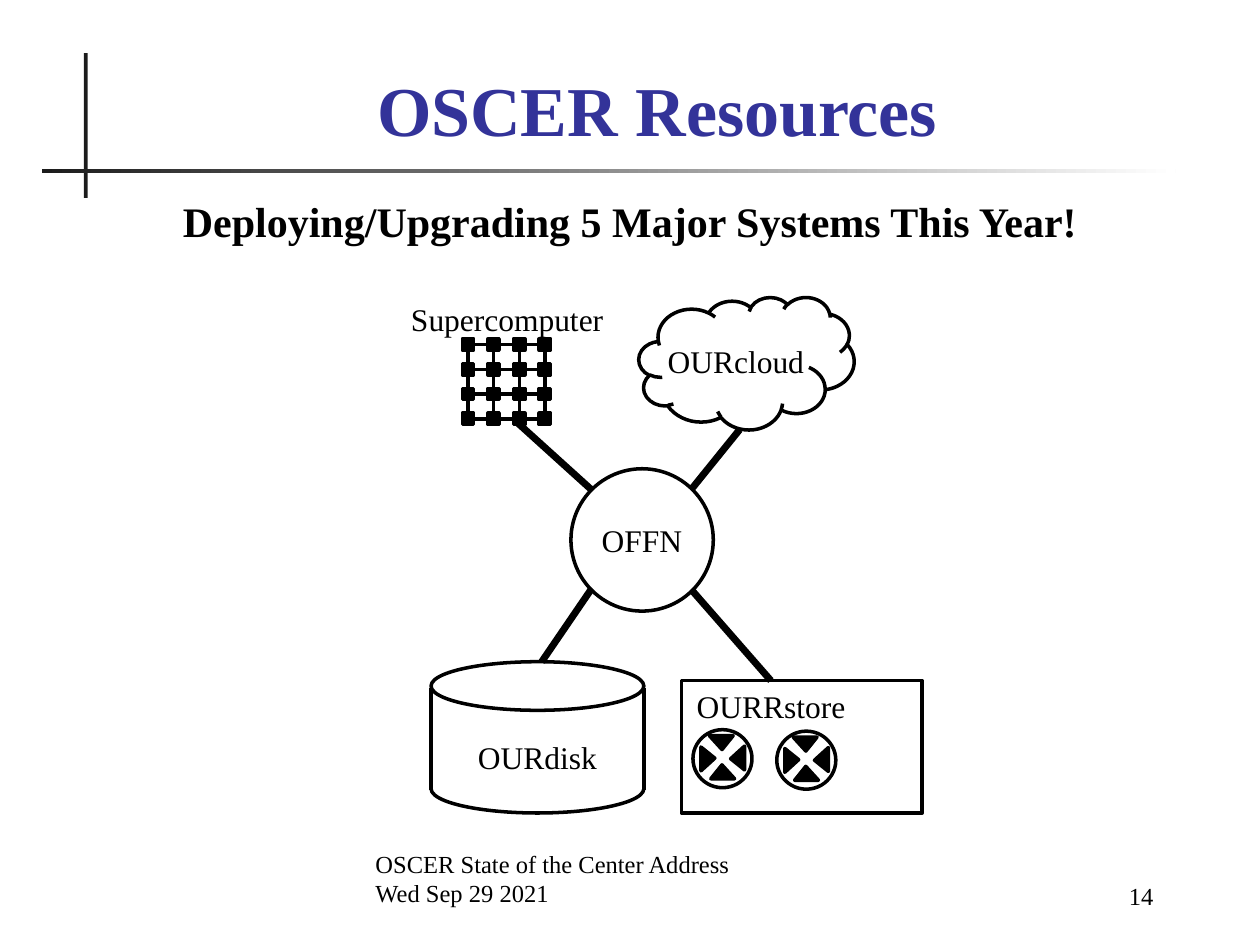
from lxml.etree import SubElement
from pptx import Presentation
from pptx.dml.color import RGBColor
from pptx.enum.shapes import MSO_CONNECTOR, MSO_SHAPE
from pptx.enum.text import MSO_ANCHOR, PP_ALIGN
from pptx.oxml.ns import qn
from pptx.util import Cm, Pt

COLORS = {"title": "333399", "ink": "000000", "rule": "1C1C1C", "paper": "FFFFFF"}
FONT = "Times New Roman"


def rgb(name):
    """Return the named colour."""
    return RGBColor.from_string(COLORS[name])


def add_text(slide, box, text, size=18, color="ink", bold=False,
             align=PP_ALIGN.CENTER, anchor=MSO_ANCHOR.TOP):
    """Add a wrapped text box, one paragraph per line."""
    frame = slide.shapes.add_textbox(*map(Cm, box)).text_frame
    frame.word_wrap = True
    frame.vertical_anchor = anchor
    frame.text = text
    for paragraph in frame.paragraphs:
        paragraph.alignment = align
        for run in paragraph.runs:
            run.font.name = FONT
            run.font.size = Pt(size)
            run.font.bold = bold
            run.font.color.rgb = rgb(color)


def add_figure(slide, kind, box, fill=None, line="ink"):
    """Add a preset shape with optional fill and a 2 pt outline."""
    figure = slide.shapes.add_shape(kind, *map(Cm, box))
    figure.shadow.inherit = False
    if fill:
        figure.fill.solid()
        figure.fill.fore_color.rgb = rgb(fill)
    else:
        figure.fill.background()
    if line:
        figure.line.color.rgb = rgb(line)
        figure.line.width = Pt(2)
    else:
        figure.line.fill.background()
    return figure


def add_link(slide, start=(0, 0), end=(0, 0), width=2):
    """Add a straight black connector."""
    link = slide.shapes.add_connector(
        MSO_CONNECTOR.STRAIGHT, *map(Cm, (*start, *end)))
    link.line.color.rgb = rgb("ink")
    link.line.width = Pt(width)
    SubElement(link._element.spPr, qn("a:effectLst"))
    return link


def join(slide, first, first_side, second, second_side):
    """Connect the facing sides of two nodes."""
    link = add_link(slide)
    link.begin_connect(first, first_side)
    link.end_connect(second, second_side)


def draw_header(slide, box):
    """Draw the crossed rules, the title and the headline."""
    left, top, width, height = box
    add_figure(slide, MSO_SHAPE.RECTANGLE, (left + 0.85, top, 0.08, height), "rule", None)
    fading_rule = add_figure(
        slide, MSO_SHAPE.RECTANGLE, (left, top + 2.34, width, 0.08), "rule", None)
    fading_rule.fill.gradient()
    fading_rule.fill.gradient_angle = 0
    for stop, color in zip(fading_rule.fill.gradient_stops, ("rule", "paper")):
        stop.color.rgb = rgb(color)
    add_text(slide, (left + 1.27, top + 0.2, 22.28, 1.88), "OSCER Resources",
             40, "title", True, anchor=MSO_ANCHOR.BOTTOM)
    add_text(slide, (left + 0.85, top + 2.74, 22.02, 1.3),
             "Deploying/Upgrading 5 Major Systems This Year!", 24, bold=True)


def draw_footer(slide, box):
    """Place the event and the page number on a shared bottom line."""
    left, top, width, height = box
    add_text(slide, (left, top, 11.1, height),
             "OSCER State of the Center Address\nWed Sep 29 2021", 14,
             align=PP_ALIGN.LEFT, anchor=MSO_ANCHOR.BOTTOM)
    add_text(slide, (left + width - 3.6, top + 0.05, 3.6, height), "14", 14,
             align=PP_ALIGN.RIGHT, anchor=MSO_ANCHOR.BOTTOM)


def draw_network(slide, box):
    """Draw the central network circle."""
    left, top, width, height = box
    add_figure(slide, MSO_SHAPE.OVAL, box)
    add_text(slide, (left + 0.35, top + 0.92, 2.16, 1.02), "OFFN")


def draw_disk(slide, box):
    """Draw a cylinder from two ellipses, a mask and two sides."""
    left, top, width, height = box
    lid = 0.98
    for lid_top in (top, top + height - lid):
        add_figure(slide, MSO_SHAPE.OVAL, (left, lid_top, width, lid))
    add_figure(slide, MSO_SHAPE.RECTANGLE, (left, top + 1.7, width, 0.84), "paper", "paper")
    for side in (left, left + width):
        add_link(slide, (side, top + 0.53), (side, top + 2.59))
    add_text(slide, (left + 0.53, top + 1.42, 3.23, 1.07), "OURdisk")


def draw_reel(slide, box):
    """Draw a tape reel with four triangles pointing to its hub."""
    left, top, width, height = box
    add_figure(slide, MSO_SHAPE.OVAL, box)
    for x, y, turn in ((0.36, 0.71, 0), (0.33, 0.12, 180),
                       (0.66, 0.43, 270), (0.06, 0.45, 90)):
        vane = add_figure(slide, MSO_SHAPE.ISOSCELES_TRIANGLE,
                          (left + x, top + y, 0.48, 0.28), "ink")
        vane.adjustments[0] = 0.47
        vane.rotation = turn


def draw_store(slide, box):
    """Draw the tape store with its label and two reels."""
    left, top, width, height = box
    add_text(slide, (left, top, 3.61, 1.02), "OURRstore")
    add_figure(slide, MSO_SHAPE.RECTANGLE, box)
    for x, y in ((0.23, 0.99), (1.92, 1.02)):
        draw_reel(slide, (left + x, top + y, 1.19, 1.17))


def draw_supercomputer(slide, box, count=4, node=0.23):
    """Draw a labelled square mesh of linked nodes."""
    left, top, width, height = box
    step_x = (width - node) / (count - 1)
    step_y = (height - node) / (count - 1)
    nodes = [[add_figure(slide, MSO_SHAPE.RECTANGLE,
                         (left + col * step_x, top + row * step_y, node, node), "ink")
              for col in range(count)] for row in range(count)]
    for row in range(count):
        for col in range(count - 1):
            join(slide, nodes[row][col], 3, nodes[row][col + 1], 1)
            join(slide, nodes[col][row], 2, nodes[col + 1][row], 0)
    add_text(slide, (left - 1.37, top - 0.91, 4.55, 1.02), "Supercomputer")


def draw_cloud(slide, box):
    """Draw the labelled cloud."""
    left, top, width, height = box
    add_figure(slide, MSO_SHAPE.CLOUD, box)
    add_text(slide, (left + 0.15, top + 0.79, 3.61, 1.02), "OURcloud")


def draw_links(slide, box):
    """Link the corners of the network circle to the four systems."""
    left, top, width, height = box
    right, bottom = left + width, top + height
    for corner, system in (((left, top), (10.44, 8.53)),
                           ((right, top), (14.91, 8.66)),
                           ((left, bottom), (10.92, 13.34)),
                           ((right, bottom), (15.54, 13.72))):
        add_link(slide, corner, system, 4)


def main():
    """Build and save the slide."""
    deck = Presentation()
    deck.slide_width, deck.slide_height = Cm(25.4), Cm(19.05)
    slide = deck.slides.add_slide(deck.slide_layouts[6])
    draw_header(slide, (0.84, 1.07, 22.86, 2.92))
    draw_footer(slide, (7.32, 17.15, 16.18, 1.27))
    draw_network(slide, (11.51, 9.45, 2.87, 2.87))
    draw_disk(slide, (8.69, 13.34, 4.29, 3.05))
    draw_store(slide, (13.74, 13.72, 4.85, 2.67))
    draw_supercomputer(slide, (9.32, 6.83, 1.78, 1.73))
    draw_cloud(slide, (12.88, 5.99, 4.34, 2.67))
    draw_links(slide, (11.91, 9.86, 2.03, 2.03))
    deck.save("out.pptx")


if __name__ == "__main__":
    main()
